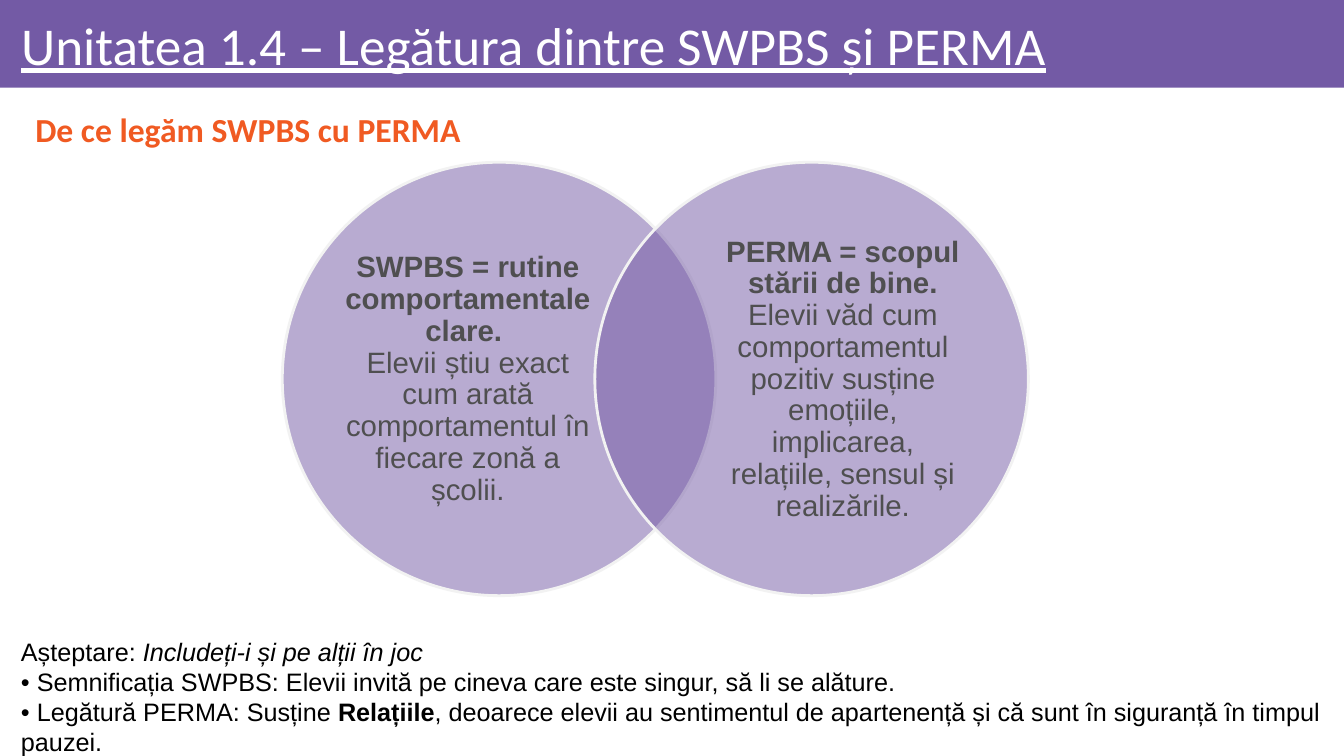
from dataclasses import dataclass

import pptx
import pptx.dml.color
import pptx.enum.shapes
import pptx.enum.text
import pptx.oxml.ns
import pptx.util
from lxml import etree
from pptx.util import Inches

ALIGN = pptx.enum.text.PP_ALIGN
ANCHOR = pptx.enum.text.MSO_ANCHOR
SHAPE = pptx.enum.shapes.MSO_SHAPE


@dataclass(frozen=True)
class Theme:
    band: str = "735AA5"
    circle: str = "7359A5"
    circle_line: str = "F2F2F2"
    circle_text: str = "4F4F50"
    heading: str = "F05A22"
    title: str = "FFFFFF"
    text: str = "000000"
    title_font: str = "Calibri"
    text_font: str = "Arial"
    title_size: int = 38
    heading_size: int = 24
    circle_size: int = 21
    text_size: int = 18


THEME = Theme()

# Each paragraph is a list of (text, style) runs
SWPBS = [
    [("SWPBS = rutine comportamentale clare. ", "bold")],
    [("Elevii știu exact cum arată comportamentul în fiecare zonă a școlii.", "")],
]
PERMA = [
    [("PERMA = scopul stării de bine. ", "bold"),
     ("Elevii văd cum comportamentul pozitiv susține emoțiile, implicarea, "
      "relațiile, sensul și realizările.", "")],
]
EXAMPLE = [
    [("Așteptare: ", ""), ("Includeți-i și pe alții în joc", "italic")],
    [("• Semnificația SWPBS: Elevii invită pe cineva care este singur, "
      "să li se alăture.", "")],
    [("• Legătură PERMA: Susține ", ""), ("Relațiile", "bold"),
     (", deoarece elevii au sentimentul de apartenență și că sunt în siguranță "
      "în timpul pauzei.", "")],
]


def rgb(color):
    return pptx.dml.color.RGBColor.from_string(color)


def place(shape, left, top, width, height):
    shape.left, shape.top = Inches(left), Inches(top)
    shape.width, shape.height = Inches(width), Inches(height)


def set_frame(frame, anchor, left, top, right, bottom):
    frame.word_wrap = True
    frame.auto_size = pptx.enum.text.MSO_AUTO_SIZE.NONE
    frame.vertical_anchor = anchor
    frame.margin_left, frame.margin_top = Inches(left), Inches(top)
    frame.margin_right, frame.margin_bottom = Inches(right), Inches(bottom)


def set_font(paragraph, name, size, color):
    paragraph.font.name = name
    paragraph.font.size = pptx.util.Pt(size)
    paragraph.font.color.rgb = rgb(color)


def fill_paragraphs(frame, paragraphs, size, color, alignment, spacing):
    for index, runs in enumerate(paragraphs):
        paragraph = frame.add_paragraph() if index else frame.paragraphs[0]
        paragraph.alignment = alignment
        paragraph.line_spacing = spacing
        set_font(paragraph, THEME.text_font, size, color)
        for text, style in runs:
            run = paragraph.add_run()
            run.text = text
            if style == "bold":
                run.font.bold = True
            elif style == "italic":
                run.font.italic = True


def add_plain_shape(slide, kind, left, top, width, height, color):
    shape = slide.shapes.add_shape(
        kind, Inches(left), Inches(top), Inches(width), Inches(height))
    shape.shadow.inherit = False
    shape.fill.solid()
    shape.fill.fore_color.rgb = rgb(color)
    shape.line.fill.background()
    return shape


def add_band(slide):
    band = add_plain_shape(slide, SHAPE.RECTANGLE, 0, 0, 13.33, 0.87, THEME.band)
    slide.shapes._spTree.insert(2, band._element)  # behind the title


def set_title(slide, text):
    title = slide.shapes.title
    place(title, 0.11, 0.09, 13.06, 0.78)
    set_frame(title.text_frame, ANCHOR.MIDDLE, 0.1, 0.06, 0.06, 0.06)
    paragraph = title.text_frame.paragraphs[0]
    paragraph.text = text
    paragraph.alignment = ALIGN.LEFT
    paragraph.line_spacing = 0.9
    set_font(paragraph, THEME.title_font, THEME.title_size, THEME.title)
    paragraph.font.underline = True


def set_heading(slide, text):
    heading = slide.placeholders[1]
    place(heading, 0, 1.01, 13.06, 0.6)
    set_frame(heading.text_frame, ANCHOR.MIDDLE, 0.1, 0.05, 0.1, 0.05)
    paragraph = heading.text_frame.paragraphs[0]
    paragraph.text = text
    paragraph.alignment = ALIGN.JUSTIFY
    paragraph.line_spacing = 0.9
    paragraph.space_before = pptx.util.Pt(10)
    set_font(paragraph, THEME.title_font, THEME.heading_size, THEME.heading)
    paragraph.font.bold = True
    # Hanging indent without a bullet
    properties = paragraph._p.get_or_add_pPr()
    properties.set("marL", str(Inches(0.5)))
    properties.set("indent", str(Inches(-0.25)))
    properties.insert_element_before(
        properties.makeelement(pptx.oxml.ns.qn("a:buNone")),
        "a:tabLst", "a:defRPr", "a:extLst")


def add_text(slide, left, top, width, height):
    return slide.shapes.add_textbox(
        Inches(left), Inches(top), Inches(width), Inches(height)).text_frame


def add_circle(slide, left, text_left, paragraphs):
    circle = add_plain_shape(slide, SHAPE.OVAL, left, 1.61, 4.3, 4.3, THEME.circle)
    circle.line.color.rgb = rgb(THEME.circle_line)
    circle.line.width = pptx.util.Pt(2)
    # Half-transparent fill, so that the overlap shows
    color = circle._element.spPr.find(
        pptx.oxml.ns.qn("a:solidFill")).find(pptx.oxml.ns.qn("a:srgbClr"))
    etree.SubElement(color, pptx.oxml.ns.qn("a:alpha"), val="50000")

    frame = add_text(slide, text_left, 2.12, 2.48, 3.29)
    set_frame(frame, ANCHOR.MIDDLE, 0, 0, 0, 0)
    fill_paragraphs(frame, paragraphs, THEME.circle_size, THEME.circle_text,
                    ALIGN.CENTER, 0.9)


def add_example(slide):
    frame = add_text(slide, 0.11, 6.26, 13.53, 1.31)
    set_frame(frame, ANCHOR.TOP, 0.1, 0.05, 0.1, 0.05)
    fill_paragraphs(frame, EXAMPLE, THEME.text_size, THEME.text, ALIGN.LEFT, 1.0)


def main():
    presentation = pptx.Presentation()
    presentation.slide_width = Inches(13.33)
    presentation.slide_height = Inches(7.5)
    slide = presentation.slides.add_slide(presentation.slide_layouts[1])

    # Header
    add_band(slide)
    set_title(slide, "Unitatea 1.4 – Legătura dintre SWPBS și PERMA")
    set_heading(slide, "De ce legăm SWPBS cu PERMA")

    # Overlapping circles
    add_circle(slide, 2.8, 3.4, SWPBS)
    add_circle(slide, 5.9, 7.12, PERMA)

    # Example
    add_example(slide)
    presentation.save("out.pptx")


if __name__ == "__main__":
    main()
